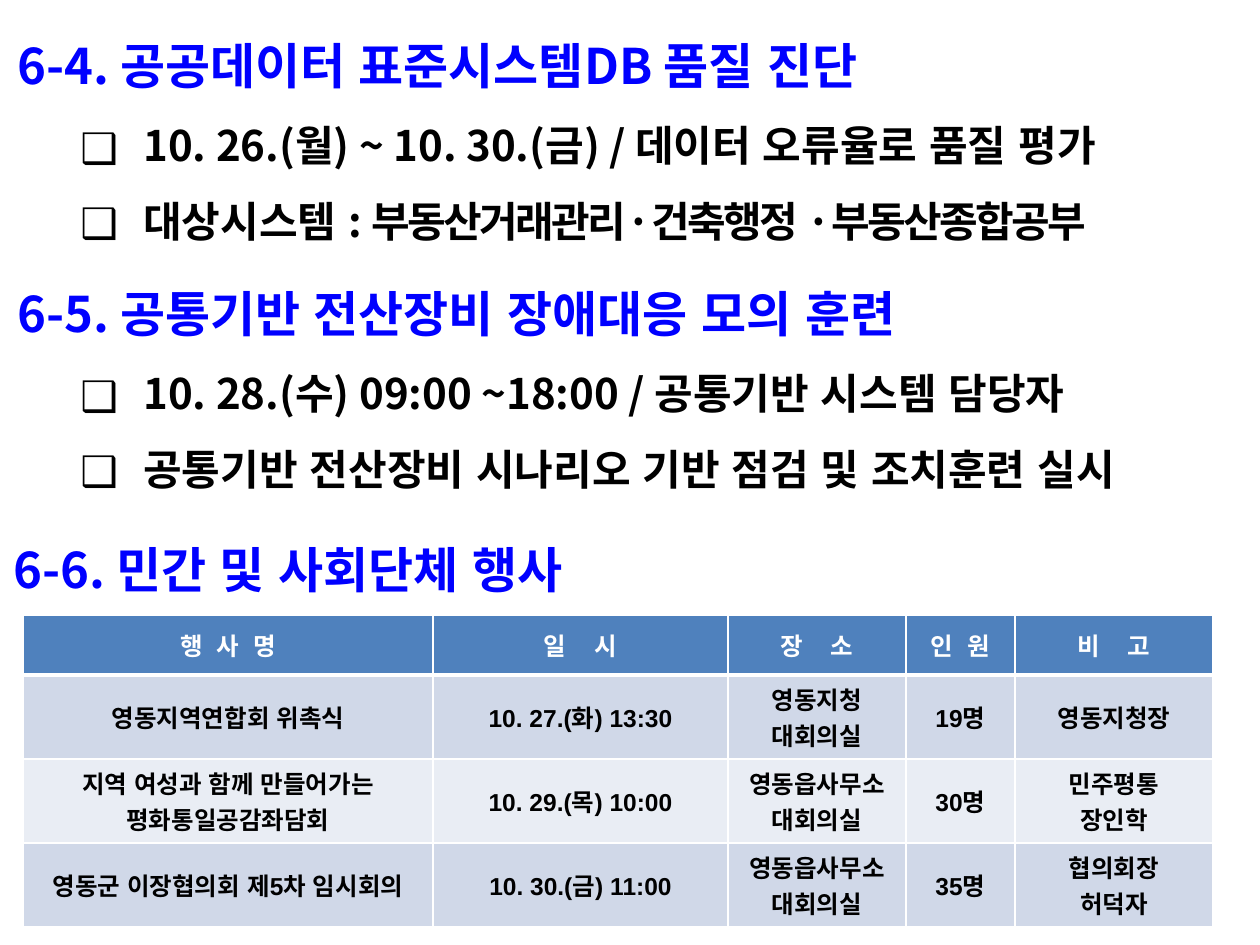
from lxml import etree
from pptx import Presentation
from pptx import util as u
from pptx.dml.color import RGBColor
from pptx.enum import lang, text as t
from pptx.oxml import ns

PX = 914400 / 126
BLUE = RGBColor(0x00, 0x00, 0xFF)
BLACK = RGBColor(0x00, 0x00, 0x00)
WHITE = RGBColor(0xFF, 0xFF, 0xFF)
HEADER = RGBColor(0x4F, 0x81, 0xBD)
BANDS = RGBColor(0xD0, 0xD8, 0xE8), RGBColor(0xE9, 0xED, 0xF4)
KOREAN = "Noto Sans CJK KR"

SECTIONS = [
    ((5, 0, 1221, 244), "6-4. 공공데이터 표준시스템DB 품질 진단", [
        [("10. 26.(월) ~ 10. 30.(금) / 데이터 오류율로 품질 평가", 0)],
        [("대상시스템 : ", 0),
         ("부동산거래관리·건축행정 ·부동산종합공부", -1.5)],
    ]),
    ((5, 248, 1221, 244), "6-5. 공통기반 전산장비 장애대응 모의 훈련", [
        [("10. 28.(수) 09:00 ~18:00 / 공통기반 시스템 담당자", 0)],
        [("공통기반 전산장비 시나리오 기반 점검 및 조치훈련 실시", 0)],
    ]),
    ((1, 504, 1249, 103), "6-6. 민간 및 사회단체 행사", []),
]
COLUMNS = [  # heading, letter spacing in points, width
    ("행 사 명", 2, 410), ("일 시", 6, 295), ("장 소", 6, 178),
    ("인 원", 2, 109), ("비 고", 6, 198),
]
EVENTS = [
    ("영동지역연합회 위촉식", "10. 27.(화) 13:30", "영동지청\n대회의실",
     "19명", "영동지청장"),
    ("지역 여성과 함께 만들어가는 평화통일공감좌담회", "10. 29.(목) 10:00",
     "영동읍사무소\n대회의실", "30명", "민주평통\n장인학"),
    ("영동군 이장협의회 제5차 임시회의", "10. 30.(금) 11:00",
     "영동읍사무소\n대회의실", "35명", "협의회장\n허덕자"),
]


def px(length):
    return u.Emu(round(length * PX))


def add_text(para, text, size, color=BLACK, font=KOREAN, spacing=0):
    span = para.add_run()
    span.text = text
    span.font.size = u.Pt(size)
    span.font.bold = True
    span.font.name = font
    span.font.language_id = lang.MSO_LANGUAGE_ID.KOREAN
    span.font.color.rgb = color
    props = span.font._element
    etree.SubElement(props, ns.qn("a:ea"), typeface=KOREAN)
    if spacing:
        props.set("spc", str(round(spacing * 100)))


def add_bullet(para):
    props = para._p.get_or_add_pPr()
    props.set("marL", str(px(126)))
    props.set("indent", str(px(-63)))
    color = etree.SubElement(props, ns.qn("a:buClr"))
    etree.SubElement(color, ns.qn("a:srgbClr"), val=str(BLACK))
    etree.SubElement(props, ns.qn("a:buFont"), typeface=KOREAN)
    etree.SubElement(props, ns.qn("a:buChar"), char="❑")


def add_section(page, box, heading, items):
    frame = page.shapes.add_textbox(*map(px, box)).text_frame
    frame.word_wrap = True
    para = frame.paragraphs[0]
    para.line_spacing = 1.5
    add_text(para, heading, 28, color=BLUE)
    for item in items:
        para = frame.add_paragraph()
        para.level = 1
        add_bullet(para)
        para.line_spacing = 1.5
        for text, spacing in item:
            add_text(para, text, 24, spacing=spacing)


def add_borders(cell, bottom):
    props = cell._tc.get_or_add_tcPr()
    for side, width in (("L", 1), ("R", 1), ("T", 1), ("B", bottom)):
        line = etree.SubElement(props, ns.qn("a:ln" + side),
                                w=str(u.Pt(width)))
        fill = etree.SubElement(line, ns.qn("a:solidFill"))
        etree.SubElement(fill, ns.qn("a:srgbClr"), val=str(WHITE))


def fill_cell(cell, text, fill, color=BLACK, spacing=0, bottom=1):
    add_borders(cell, bottom)
    cell.fill.solid()
    cell.fill.fore_color.rgb = fill
    cell.vertical_anchor = t.MSO_ANCHOR.MIDDLE
    frame = cell.text_frame
    for index, line in enumerate(text.split("\n")):
        para = frame.add_paragraph() if index else frame.paragraphs[0]
        para.alignment = t.PP_ALIGN.CENTER
        add_text(para, line, 14, color=color, font="Arial", spacing=spacing)


def add_events(page, left, top, header_height, row_height):
    width = sum(column[2] for column in COLUMNS)
    height = header_height + row_height * len(EVENTS)
    table = page.shapes.add_table(
        len(EVENTS) + 1, len(COLUMNS),
        px(left), px(top), px(width), px(height)).table
    table.rows[0].height = px(header_height)
    for index, (heading, spacing, column_width) in enumerate(COLUMNS):
        table.columns[index].width = px(column_width)
        fill_cell(table.cell(0, index), heading, HEADER, color=WHITE,
                  spacing=spacing, bottom=3)
    for row, event in enumerate(EVENTS, 1):
        table.rows[row].height = px(row_height)
        for index, text in enumerate(event):
            fill_cell(table.cell(row, index), text, BANDS[(row - 1) % 2])


def main():
    deck = Presentation()
    deck.slide_width, deck.slide_height = px(1260), px(945)
    page = deck.slides.add_slide(deck.slide_layouts[6])
    for box, heading, items in SECTIONS:
        add_section(page, box, heading, items)
    add_events(page, 23, 615, 60, 84)
    deck.save("out.pptx")


if __name__ == "__main__":
    main()
